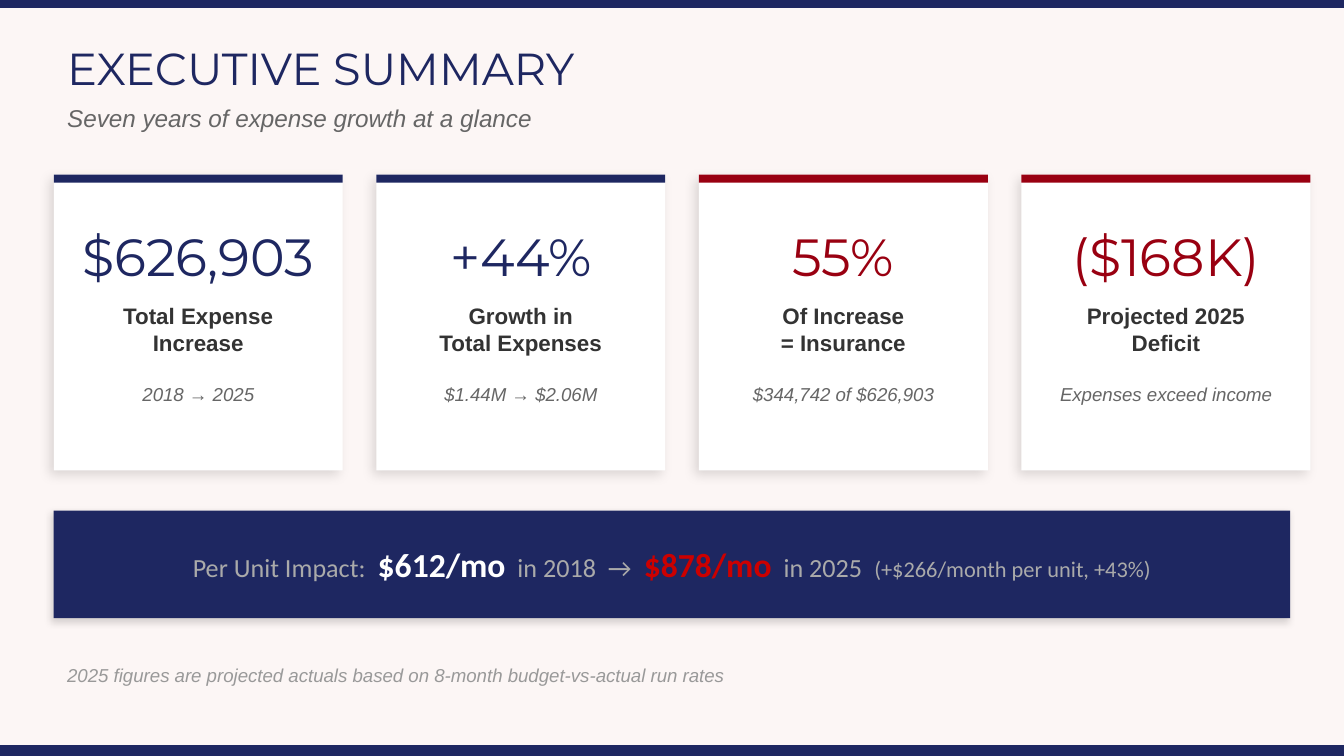
"""Build the executive summary slide with four key figures and a per-unit banner."""
import lxml.etree
import pptx
import pptx.dml.color
import pptx.enum.shapes
import pptx.enum.text
import pptx.oxml.ns
import pptx.util

Inches = pptx.util.Inches
Pt = pptx.util.Pt
Align = pptx.enum.text.PP_ALIGN
Anchor = pptx.enum.text.MSO_ANCHOR

NAVY, RED, CREAM, WHITE = "1E2761", "990011", "FCF6F5", "FFFFFF"
BRIGHT_RED, DARK, GRAY, FOOTNOTE, SILVER = "CC0000", "333333", "666666", "999999", "AAAAAA"
WIDTH = 10
HEIGHT = WIDTH * 9 / 16
CARD_LEFT, CARD_TOP, CARD_WIDTH, CARD_HEIGHT, CARD_STEP = 0.4, 1.3, 2.15, 2.2, 2.4

CARDS = [
    (NAVY, "$626,903", ["Total Expense", "Increase"], "2018 → 2025"),
    (NAVY, "+44%", ["Growth in", "Total Expenses"], "$1.44M → $2.06M"),
    (RED, "55%", ["Of Increase", "= Insurance"], "$344,742 of $626,903"),
    (RED, "($168K)", ["Projected 2025", "Deficit"], "Expenses exceed income"),
]

IMPACT = [
    ("Per Unit Impact:  ", 14, SILVER, False),
    ("$612/mo", 18, WHITE, True),
    ("  in 2018  →  ", 14, SILVER, False),
    ("$878/mo", 18, BRIGHT_RED, True),
    ("  in 2025  ", 14, SILVER, False),
    ("(+$266/month per unit, +43%)", 12, SILVER, False),
]


def color(value):
    return pptx.dml.color.RGBColor.from_string(value)


class SlideBuilder:
    def __init__(self, slide):
        self.slide = slide
        self.slide.background.fill.solid()
        self.slide.background.fill.fore_color.rgb = color(CREAM)

    def style_font(self, font, size, fill, name="Arial", bold=False, italic=False):
        font.name, font.size = name, Pt(size)
        font.bold, font.italic = bold, italic
        font.color.rgb = color(fill)

    def rectangle(self, left, top, width, height, fill):
        shape = self.slide.shapes.add_shape(
            pptx.enum.shapes.MSO_SHAPE.RECTANGLE,
            Inches(left), Inches(top), Inches(width), Inches(height))
        shape.shadow.inherit = False
        shape.fill.solid()
        shape.fill.fore_color.rgb = color(fill)
        shape.line.fill.background()
        return shape

    def shadow(self, shape, opacity, blur, distance):
        qualify = pptx.oxml.ns.qn
        effects = shape._element.spPr.find(qualify("a:effectLst"))
        outer = lxml.etree.SubElement(
            effects, qualify("a:outerShdw"), blurRad=str(Pt(blur)), dist=str(Pt(distance)),
            dir=str(135 * 60000), algn="bl", rotWithShape="0")
        tint = lxml.etree.SubElement(outer, qualify("a:srgbClr"), val="000000")
        lxml.etree.SubElement(tint, qualify("a:alpha"), val=str(opacity * 1000))

    def frame(self, left, top, width, height, anchor):
        box = self.slide.shapes.add_textbox(
            Inches(left), Inches(top), Inches(width), Inches(height))
        frame = box.text_frame
        frame.word_wrap = True
        frame.vertical_anchor = anchor
        frame.margin_left = frame.margin_right = frame.margin_top = frame.margin_bottom = 0
        return frame

    def text(self, left, top, width, height, lines, size, fill,
             align=Align.LEFT, anchor=Anchor.MIDDLE, **style):
        frame = self.frame(left, top, width, height, anchor)
        frame.text = "\n".join(lines)
        for paragraph in frame.paragraphs:
            paragraph.alignment = align
            self.style_font(paragraph.font, size, fill, **style)

    def card(self, left, accent, figure, label, detail):
        card = self.rectangle(left, CARD_TOP, CARD_WIDTH, CARD_HEIGHT, WHITE)
        self.shadow(card, 12, 6, 3)
        self.rectangle(left, CARD_TOP, CARD_WIDTH, 0.06, accent)
        self.text(left, 1.55, CARD_WIDTH, 0.7, [figure], 28, accent,
                  Align.CENTER, name="Montserrat")
        self.text(left, 2.25, CARD_WIDTH, 0.6, label, 12, DARK,
                  Align.CENTER, Anchor.TOP, bold=True)
        self.text(left, 2.85, CARD_WIDTH, 0.4, [detail], 10, GRAY,
                  Align.CENTER, Anchor.TOP, italic=True)

    def banner(self, left, top, width, height, parts):
        self.shadow(self.rectangle(left, top, width, height, NAVY), 15, 4, 2)
        paragraph = self.frame(left, top, width, height, Anchor.MIDDLE).paragraphs[0]
        paragraph.alignment = Align.CENTER
        for words, size, fill, bold in parts:
            run = paragraph.add_run()
            run.text = words
            self.style_font(run.font, size, fill, "Calibri", bold)


def main():
    presentation = pptx.Presentation()
    presentation.slide_width = Inches(WIDTH)
    presentation.slide_height = Inches(HEIGHT)
    builder = SlideBuilder(presentation.slides.add_slide(presentation.slide_layouts[6]))

    builder.rectangle(0, 0, WIDTH, 0.06, NAVY)
    builder.text(0.5, 0.25, 9, 0.5, ["EXECUTIVE SUMMARY"], 24, NAVY, name="Montserrat")
    builder.text(0.5, 0.7, 9, 0.35, ["Seven years of expense growth at a glance"],
                 13, GRAY, italic=True)
    for index, card in enumerate(CARDS):
        builder.card(CARD_LEFT + index * CARD_STEP, *card)
    builder.banner(CARD_LEFT, 3.8, 9.2, 0.8, IMPACT)
    builder.text(
        0.5, 4.85, 9, 0.35,
        ["2025 figures are projected actuals based on 8-month budget-vs-actual run rates"],
        10, FOOTNOTE, italic=True)
    builder.rectangle(0, HEIGHT - 0.08, WIDTH, 0.08, NAVY)
    presentation.save("out.pptx")


if __name__ == "__main__":
    main()
